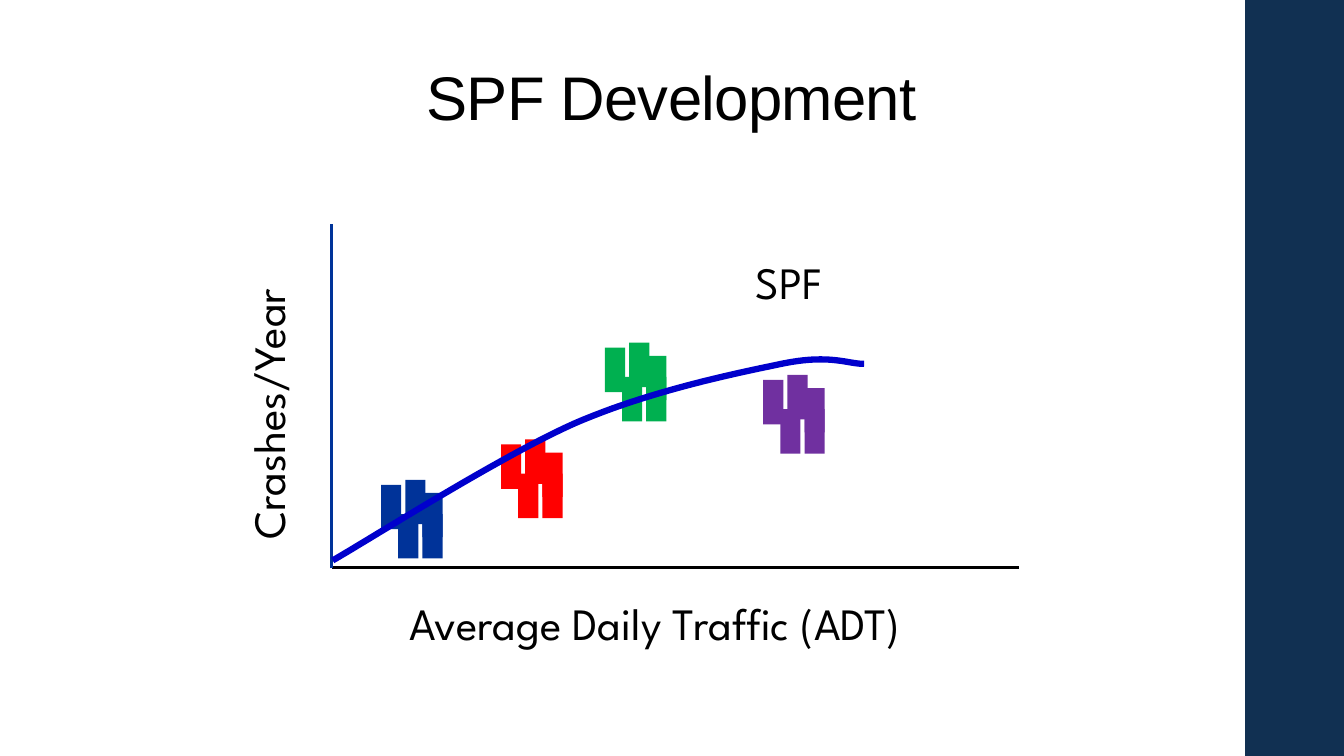
import pptx
import pptx.util
import pptx.dml.color
import pptx.enum.shapes
import pptx.enum.text
import pptx.oxml.ns
import lxml.etree

Inches = pptx.util.Inches
Pt = pptx.util.Pt
RGBColor = pptx.dml.color.RGBColor
RECT = pptx.enum.shapes.MSO_SHAPE.RECTANGLE

BLACK = RGBColor(0x00, 0x00, 0x00)
NAVY = RGBColor(0x11, 0x30, 0x52)
BLUE = RGBColor(0x00, 0x33, 0x99)
RED = RGBColor(0xFF, 0x00, 0x00)
GREEN = RGBColor(0x00, 0xB0, 0x50)
PURPLE = RGBColor(0x70, 0x30, 0xA0)
CURVE = RGBColor(0x00, 0x00, 0xCC)

deck = pptx.Presentation()
deck.slide_width = Inches(13.33)
deck.slide_height = Inches(7.5)
slide = deck.slides.add_slide(deck.slide_layouts[5])
shapes = slide.shapes


def add_bar(left, top, width, height, color):
    bar = shapes.add_shape(
        RECT, Inches(left), Inches(top), Inches(width), Inches(height)
    )
    bar.shadow.inherit = False
    bar.fill.solid()
    bar.fill.fore_color.rgb = color
    bar.line.fill.background()


# Side band and title
add_bar(12.35, 0, 0.98, 7.5, NAVY)

title = shapes.title
title.left, title.top = Inches(2.35), Inches(0.5)
title.width, title.height = Inches(8.62), Inches(0.88)
frame = title.text_frame
frame.auto_size = pptx.enum.text.MSO_AUTO_SIZE.NONE
frame.vertical_anchor = pptx.enum.text.MSO_ANCHOR.BOTTOM
para = frame.paragraphs[0]
para.alignment = pptx.enum.text.PP_ALIGN.CENTER
para.line_spacing = 0.9
run = para.add_run()
run.text = "SPF Development"
run.font.size = Pt(44)
run.font.name = "Arial"
run.font.color.rgb = BLACK
run.font._element.set("spc", "-50")

# Axes
for x1, y1, x2, y2, color in [
    (3.29, 5.63, 10.11, 5.63, BLACK),
    (3.29, 5.64, 3.29, 2.22, BLUE),
]:
    axis = shapes.add_connector(
        pptx.enum.shapes.MSO_CONNECTOR.STRAIGHT,
        Inches(x1), Inches(y1), Inches(x2), Inches(y2),
    )
    axis.line.color.rgb = color
    axis.line.width = Pt(2.25)
    lxml.etree.SubElement(
        axis._element.spPr, pptx.oxml.ns.qn("a:effectLst")
    )

# Clusters of sites, each with the same five bars
OFFSETS = [(0, 0.05), (0.24, 0), (0.17, 0.34), (0.41, 0.13), (0.41, 0.34)]
for left, top, color in [
    (3.78, 4.76, BLUE),
    (4.97, 4.36, RED),
    (6, 3.4, GREEN),
    (7.57, 3.72, PURPLE),
]:
    for dx, dy in OFFSETS:
        add_bar(left + dx, top + dy, 0.2, 0.44, color)

# SPF curve, traced along three cubic segments
KNOTS = [
    (3.3, 5.56), (3.7, 5.33), (4.96, 4.53), (5.7, 4.2), (6.44, 3.88),
    (7.27, 3.71), (7.75, 3.61), (8.23, 3.51), (8.4, 3.61), (8.57, 3.61),
]
STEPS = 24
points = []
for first in range(0, len(KNOTS) - 1, 3):
    for step in range(1, STEPS + 1):
        t = step / STEPS
        parts = ((1 - t) ** 3, 3 * t * (1 - t) ** 2, 3 * t * t * (1 - t), t ** 3)
        group = KNOTS[first:first + 4]
        x = sum(part * knot[0] for part, knot in zip(parts, group))
        y = sum(part * knot[1] for part, knot in zip(parts, group))
        points.append((Inches(x), Inches(y)))
start = KNOTS[0]
pen = shapes.build_freeform(Inches(start[0]), Inches(start[1]))
pen.add_line_segments(points, close=False)
curve = pen.convert_to_shape()
curve.shadow.inherit = False
curve.fill.background()
curve.line.color.rgb = CURVE
curve.line.width = Pt(4.5)

# Labels
for text, left, top, width, turn in [
    ("Average Daily Traffic (ADT)", 3.96, 5.86, 6.03, 0),
    ("Crashes/Year", 1.1, 3.57, 3.12, 270),
    ("SPF", 7.4, 2.48, 1.03, 0),
]:
    label = shapes.add_textbox(
        Inches(left), Inches(top), Inches(width), Inches(0.64)
    )
    label.rotation = turn
    frame = label.text_frame
    frame.word_wrap = False
    frame.auto_size = pptx.enum.text.MSO_AUTO_SIZE.SHAPE_TO_FIT_TEXT
    run = frame.paragraphs[0].add_run()
    run.text = text
    run.font.size = Pt(32)
    run.font.name = "League Spartan"
    run.font.color.rgb = BLACK

deck.save("out.pptx")
